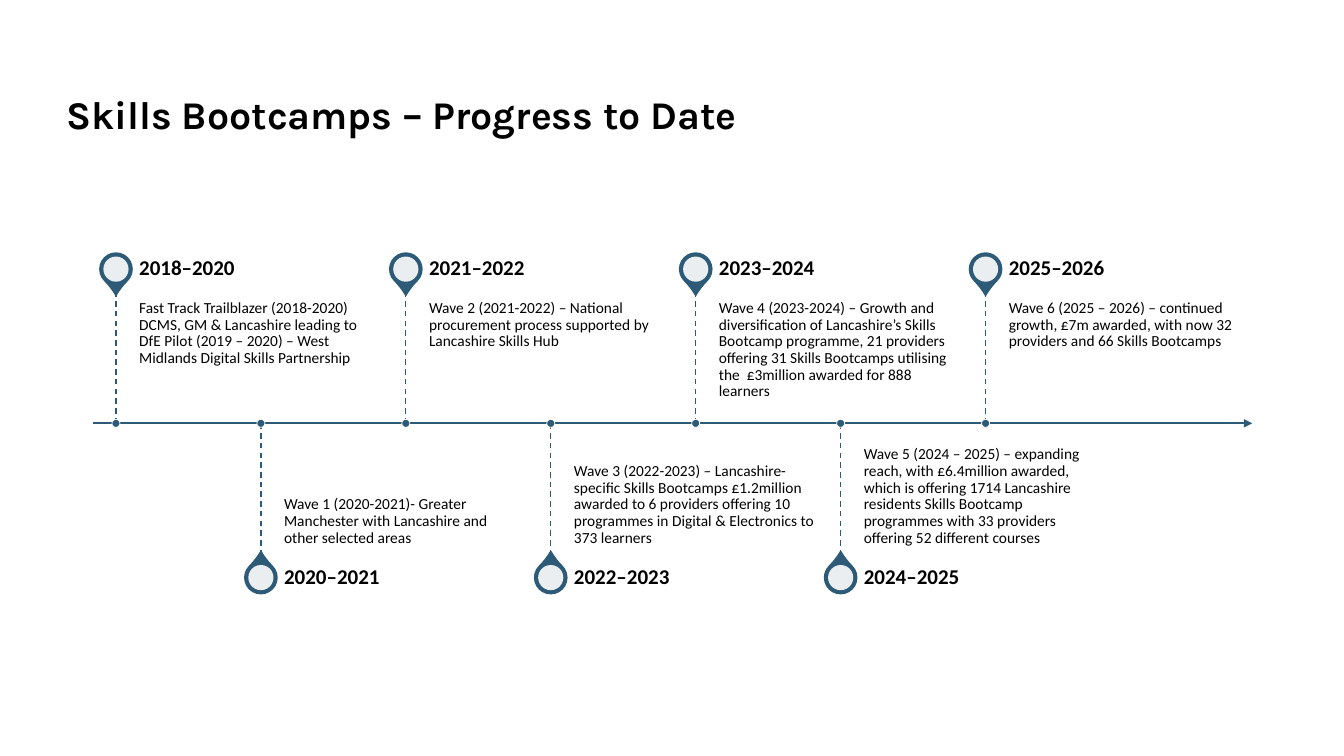
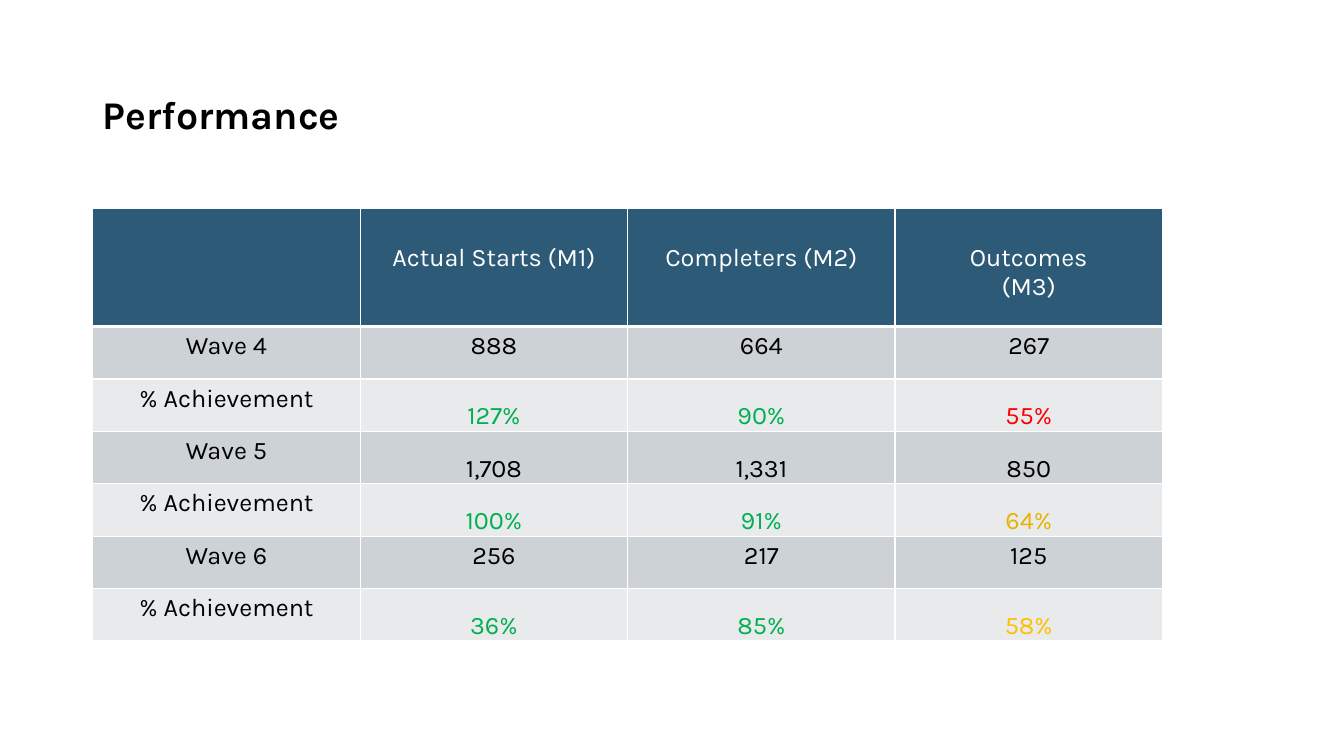
import pptx
import pptx.util
import pptx.dml.color
import pptx.enum.dml
import pptx.enum.shapes
import pptx.enum.text
import pptx.oxml.ns
import pptx.oxml.xmlchemy

Inches = pptx.util.Inches
Pt = pptx.util.Pt
RGBColor = pptx.dml.color.RGBColor
Shapes = pptx.enum.shapes.MSO_SHAPE
Anchor = pptx.enum.text.MSO_ANCHOR
Align = pptx.enum.text.PP_ALIGN
qn = pptx.oxml.ns.qn
new_element = pptx.oxml.xmlchemy.OxmlElement

BLUE = RGBColor(0x2C, 0x5A, 0x77)
BLACK = RGBColor(0, 0, 0)
WHITE = RGBColor(0xFF, 0xFF, 0xFF)
BAND_DARK = RGBColor(0xCD, 0xD2, 0xD6)
BAND_LIGHT = RGBColor(0xE8, 0xEA, 0xEC)
GREEN = RGBColor(0x00, 0xB0, 0x50)
RED = RGBColor(0xFF, 0, 0)
GOLD = RGBColor(0xEA, 0xB2, 0)
AMBER = RGBColor(0xFF, 0xC0, 0)

TITLE_FONT = {"name": "Karla", "size": Pt(28), "bold": True}
PERIOD_FONT = {"name": "Calibri", "size": Pt(15), "bold": True}
DETAIL_FONT = {"name": "Calibri", "size": Pt(11), "bold": False}
TABLE_FONT = {"name": "Karla", "size": Pt(18), "bold": False}

MILESTONES = [
    ("2018–2020", "Fast Track Trailblazer (2018-2020) DCMS, GM & Lancashire leading to "
     "DfE Pilot (2019 – 2020) – West Midlands Digital Skills Partnership"),
    ("2020–2021", "Wave 1 (2020-2021)- Greater Manchester with Lancashire and other "
     "selected areas"),
    ("2021–2022", "Wave 2 (2021-2022) – National procurement process supported by "
     "Lancashire Skills Hub"),
    ("2022–2023", "Wave 3 (2022-2023) – Lancashire-specific Skills Bootcamps £1.2million "
     "awarded to 6 providers offering 10 programmes in Digital & Electronics to 373 learners"),
    ("2023–2024", "Wave 4 (2023-2024) – Growth and diversification of Lancashire’s Skills "
     "Bootcamp programme, 21 providers offering 31 Skills Bootcamps utilising the  £3million "
     "awarded for 888 learners"),
    ("2024–2025", "Wave 5 (2024 – 2025) – expanding reach, with £6.4million awarded, which "
     "is offering 1714 Lancashire residents Skills Bootcamp programmes with 33 providers "
     "offering 52 different courses"),
    ("2025–2026", "Wave 6 (2025 – 2026) – continued growth, £7m awarded, with now 32 "
     "providers and 66 Skills Bootcamps"),
]

HEADINGS = ["", "Actual Starts (M1)", "Completers (M2)", "Outcomes\n(M3)"]
# Row label, values, value colours, values sit at the bottom of the cell
RESULTS = [
    ("Wave 4", ["888", "664", "267"], [BLACK] * 3, False),
    ("% Achievement", ["127%", "90%", "55%"], [GREEN, GREEN, RED], True),
    ("Wave 5", ["1,708", "1,331", "850"], [BLACK] * 3, True),
    ("% Achievement", ["100%", "91%", "64%"], [GREEN, GREEN, GOLD], True),
    ("Wave 6", ["256", "217", "125"], [BLACK] * 3, False),
    ("% Achievement", ["36%", "85%", "58%"], [GREEN, GREEN, AMBER], True),
]


def apply_format(target, values):
    for name, value in values.items():
        setattr(target, name, value)


def set_margins(target, margins):
    sides = ("margin_left", "margin_top", "margin_right", "margin_bottom")
    apply_format(target, dict(zip(sides, map(Inches, margins))))


def write_text(text_frame, text, font, color, paragraph_format):
    text_frame.text = text
    for paragraph in text_frame.paragraphs:
        apply_format(paragraph, paragraph_format)
        apply_format(paragraph.font, font)
        paragraph.font.color.rgb = color


def add_titled_slide(presentation, title, left, width):
    slide = presentation.slides.add_slide(presentation.slide_layouts[5])
    placeholder = slide.shapes.title
    apply_format(placeholder, {"left": Inches(left), "top": Inches(0.4),
                               "width": Inches(width), "height": Inches(1.45)})
    placeholder.text_frame.vertical_anchor = Anchor.MIDDLE
    write_text(placeholder.text_frame, title, TITLE_FONT, BLACK, {"alignment": Align.LEFT})
    return slide


def add_text(slide, box, text, font, anchor, margins):
    shape = slide.shapes.add_textbox(*map(Inches, box))
    shape.text_frame.word_wrap = True
    shape.text_frame.vertical_anchor = anchor
    set_margins(shape.text_frame, margins)
    write_text(shape.text_frame, text, font, BLACK, {"line_spacing": 0.9})


def add_centred(slide, kind, x, y, size, fill, line=None, line_width=0):
    corner = (x - size / 2, y - size / 2, size, size)
    shape = slide.shapes.add_shape(kind, *map(Inches, corner))
    shape.shadow.inherit = False
    shape.fill.solid()
    shape.fill.fore_color.rgb = fill
    if line is None:
        shape.line.fill.background()
    else:
        shape.line.color.rgb = line
        shape.line.width = Pt(line_width)
    return shape


def add_line(slide, start, end, width):
    connector = slide.shapes.add_connector(
        pptx.enum.shapes.MSO_CONNECTOR.STRAIGHT, *map(Inches, start + end))
    connector.line.color.rgb = BLUE
    connector.line.width = Pt(width)
    connector._element.spPr.append(new_element("a:effectLst"))
    return connector


def add_milestone(slide, x, axis_y, above, period, detail):
    """One pin, its two texts and the dashed stem to the axis."""
    side = -1 if above else 1
    stem, label_height = 1.3, 0.46
    pin_y = axis_y + side * (stem + label_height / 2)
    text_left, text_width = x + 0.23, 2.39

    # Pin
    pin = add_centred(slide, Shapes.TEAR, x, pin_y, 0.32, BLUE, BLUE, 1)
    pin.adjustments[0] = 1.15
    pin.rotation = 135 if above else 315
    eye = add_centred(slide, Shapes.OVAL, x, pin_y, 0.25, WHITE)
    alpha = new_element("a:alpha")
    alpha.set("val", "90000")
    eye._element.spPr.find(".//" + qn("a:srgbClr")).append(alpha)

    # Texts
    detail_top = axis_y - stem if above else axis_y
    add_text(slide, (text_left, detail_top, text_width, stem), detail, DETAIL_FONT,
             Anchor.TOP if above else Anchor.BOTTOM,
             (0, 0.08, 0.08, 0.11) if above else (0, 0.11, 0, 0.08))
    add_text(slide, (text_left, pin_y - label_height / 2, text_width, label_height),
             period, PERIOD_FONT, Anchor.MIDDLE, (0, 0, 0.1, 0))

    # Stem and dot on the axis
    stem_line = add_line(slide, (x, axis_y), (x, axis_y + side * stem), 1)
    stem_line.line.dash_style = pptx.enum.dml.MSO_LINE.DASH
    add_centred(slide, Shapes.OVAL, x, axis_y, 0.08, BLUE, WHITE, 0.5)


def add_timeline(slide, left, top, width, height):
    axis_y = top + height / 2
    axis = add_line(slide, (left, axis_y), (left + width, axis_y), 1.5)
    arrowhead = new_element("a:tailEnd")
    arrowhead.set("type", "triangle")
    axis._element.spPr.find(qn("a:ln")).append(arrowhead)
    step = width / (len(MILESTONES) + 1)
    for index, (period, detail) in enumerate(MILESTONES):
        add_milestone(slide, left + 0.23 + index * step, axis_y, index % 2 == 0,
                      period, detail)


def add_borders(cell, widths):
    """White borders; widths in points for left, right, top, bottom."""
    properties = cell._tc.get_or_add_tcPr()
    for side, width in zip("LRTB", widths):
        border = new_element("a:ln" + side)
        border.set("w", str(Pt(width)))
        fill = new_element("a:solidFill")
        color = new_element("a:srgbClr")
        color.set("val", str(WHITE))
        fill.append(color)
        border.append(fill)
        properties.append(border)


def fill_cell(cell, text, color, fill, borders):
    add_borders(cell, borders)
    cell.fill.solid()
    cell.fill.fore_color.rgb = fill
    write_text(cell.text_frame, text, TABLE_FONT, color, {"alignment": Align.CENTER})


def add_results_table(slide, left, top, width, header_height, row_height):
    height = header_height + row_height * len(RESULTS)
    frame = slide.shapes.add_table(len(RESULTS) + 1, len(HEADINGS),
                                   *map(Inches, (left, top, width, height)))
    table = frame.table
    apply_format(table, {"first_row": False, "horz_banding": False})
    for column in table.columns:
        column.width = Inches(width / len(HEADINGS))
    for index, row in enumerate(table.rows):
        row.height = Inches(row_height if index else header_height)

    # Header
    for column, heading in enumerate(HEADINGS):
        cell = table.cell(0, column)
        fill_cell(cell, heading, WHITE, BLUE, (1, 1, 1, 3))
        set_margins(cell, (0.1, 0.34, 0.1, 0.05))

    # Results
    for row, (label, values, colors, at_bottom) in enumerate(RESULTS, 1):
        fill = BAND_DARK if row % 2 else BAND_LIGHT
        borders = (1, 1, 3 if row == 1 else 1, 1)
        for column, (text, color) in enumerate(zip([label] + values, [BLACK] + colors)):
            cell = table.cell(row, column)
            fill_cell(cell, text, color, fill, borders)
            if at_bottom and column:
                cell.vertical_anchor = Anchor.BOTTOM
                set_margins(cell, (0.01, 0.01, 0.01, 0))


def main():
    presentation = pptx.Presentation()
    presentation.slide_width = Inches(13.33)
    presentation.slide_height = Inches(7.5)

    slide = add_titled_slide(presentation, "Skills Bootcamps – Progress to Date", 0.56, 11.86)
    add_timeline(slide, 0.92, 2.44, 11.5, 3.52)

    slide = add_titled_slide(presentation, "Performance", 0.92, 7.36)
    add_results_table(slide, 0.92, 2.07, 10.61, 1.17, 0.52)

    presentation.save("out.pptx")


if __name__ == "__main__":
    main()
